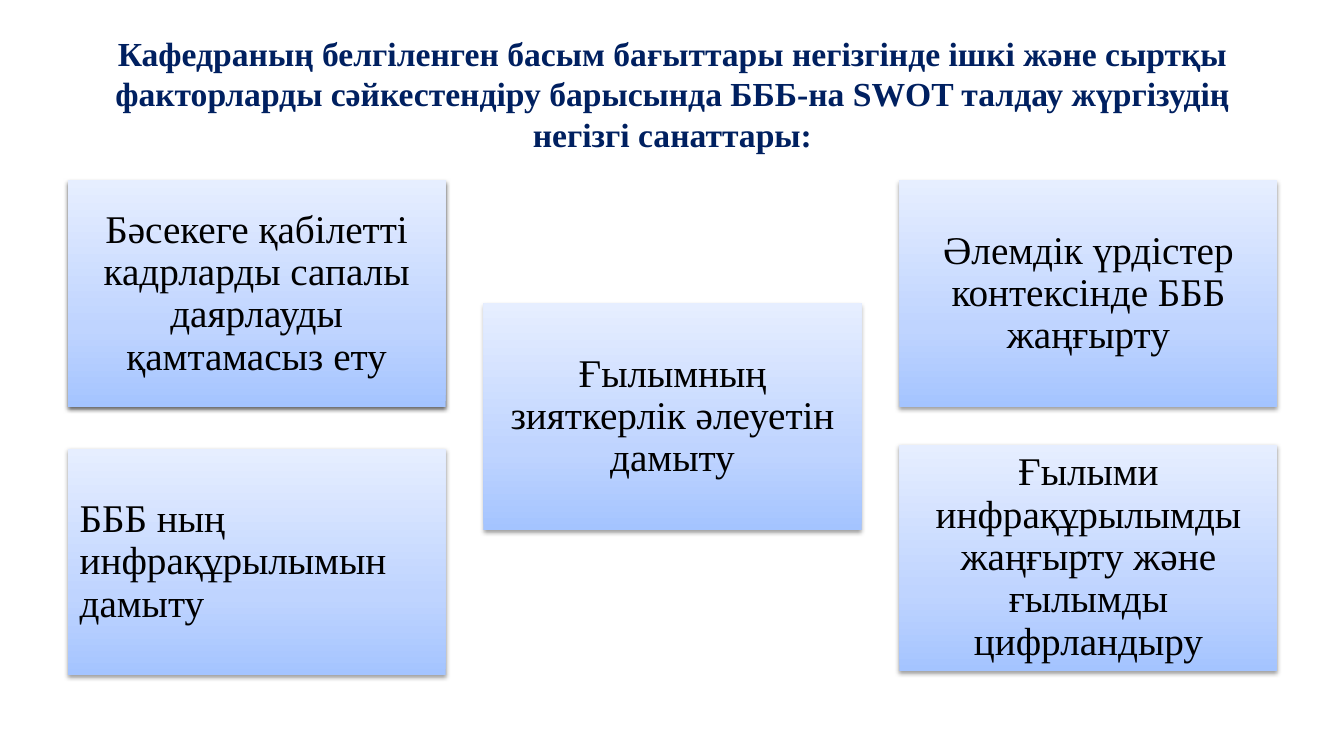
import copy
import pptx
import pptx.util
import pptx.dml.color
import pptx.enum.shapes
import pptx.enum.text
import pptx.oxml
import pptx.oxml.ns

Inches = pptx.util.Inches
Pt = pptx.util.Pt
RGBColor = pptx.dml.color.RGBColor
Align = pptx.enum.text.PP_ALIGN
qn = pptx.oxml.ns.qn

NAVY = RGBColor(0x00, 0x20, 0x60)
BLACK = RGBColor(0x00, 0x00, 0x00)
BLUES = [
    (0, RGBColor(0xA4, 0xC4, 0xFF)),
    (0.35, RGBColor(0xBF, 0xD4, 0xFF)),
    (1, RGBColor(0xE6, 0xEE, 0xFF)),
]
FACE = "Times New Roman"
LEFT, STEP = 0.67, 4.125
WIDE, HIGH = 3.75, 2.25
CARDS = [
    (0, 1.79, "Бәсекеге қабілетті кадрларды сапалы даярлауды қамтамасыз ету", Align.CENTER, 62),
    (2, 1.79, "Әлемдік үрдістер контексінде БББ жаңғырту", Align.CENTER, 38),
    (0, 4.45, "БББ ның инфрақұрылымын дамыту", Align.LEFT, 38),
    (1, 3.01, "Ғылымның зияткерлік әлеуетін дамыту", Align.CENTER, 38),
    (2, 4.41, "Ғылыми инфрақұрылымды жаңғырту және ғылымды цифрландыру", Align.CENTER, 38),
]


def write(shape, text, size, color, align, inset):
    frame = shape.text_frame
    frame.word_wrap = True
    frame.vertical_anchor = pptx.enum.text.MSO_ANCHOR.MIDDLE
    frame.margin_left = frame.margin_right = Inches(inset)
    frame.margin_top = frame.margin_bottom = Inches(inset)
    line = frame.paragraphs[0]
    line.text = text
    line.alignment = align
    line.font.name = FACE
    line.font.size = Pt(size)
    line.font.color.rgb = color
    return line


def shade(shape):
    fill = shape.fill
    fill.gradient()
    fill.gradient_angle = 90
    stops = shape.element.spPr.find(".//" + qn("a:gsLst"))
    stops.append(copy.deepcopy(stops[0]))
    for stop, (place, color) in zip(fill.gradient_stops, BLUES):
        stop.position = place
        stop.color.rgb = color


def drop(shape, alpha):
    shape.shadow.inherit = False
    shape.element.spPr.find(qn("a:effectLst")).append(pptx.oxml.parse_xml(
        f'<a:outerShdw {pptx.oxml.ns.nsdecls("a")} blurRad="40000" dist="20000" '
        'dir="5400000" rotWithShape="0"><a:srgbClr val="000000">'
        f'<a:alpha val="{alpha * 1000}"/></a:srgbClr></a:outerShdw>'))


def add_title(slide, x, y, w, h):
    box = slide.shapes.add_textbox(Inches(x), Inches(y), Inches(w), Inches(h))
    text = ("Кафедраның белгіленген басым бағыттары негізгінде ішкі және сыртқы "
            "факторларды сәйкестендіру барысында БББ-на SWOT талдау жүргізудің "
            "негізгі санаттары:")
    line = write(box, text, 24, NAVY, Align.CENTER, 0.1)
    line.font.bold = True


def add_card(slide, x, y, w, h, text, align, alpha):
    card = slide.shapes.add_shape(
        pptx.enum.shapes.MSO_SHAPE.RECTANGLE,
        Inches(x), Inches(y), Inches(w), Inches(h))
    shade(card)
    card.line.fill.background()
    drop(card, alpha)
    line = write(card, text, 28, BLACK, align, 0.12)
    line.line_spacing = 0.9


def main():
    deck = pptx.Presentation()
    deck.slide_width = Inches(13.33)
    deck.slide_height = Inches(7.5)
    slide = deck.slides.add_slide(deck.slide_layouts[6])
    add_title(slide, LEFT, 0.3, 12, 1.25)
    for col, top, text, align, alpha in CARDS:
        add_card(slide, LEFT + col * STEP, top, WIDE, HIGH, text, align, alpha)
    deck.save("out.pptx")


if __name__ == "__main__":
    main()
